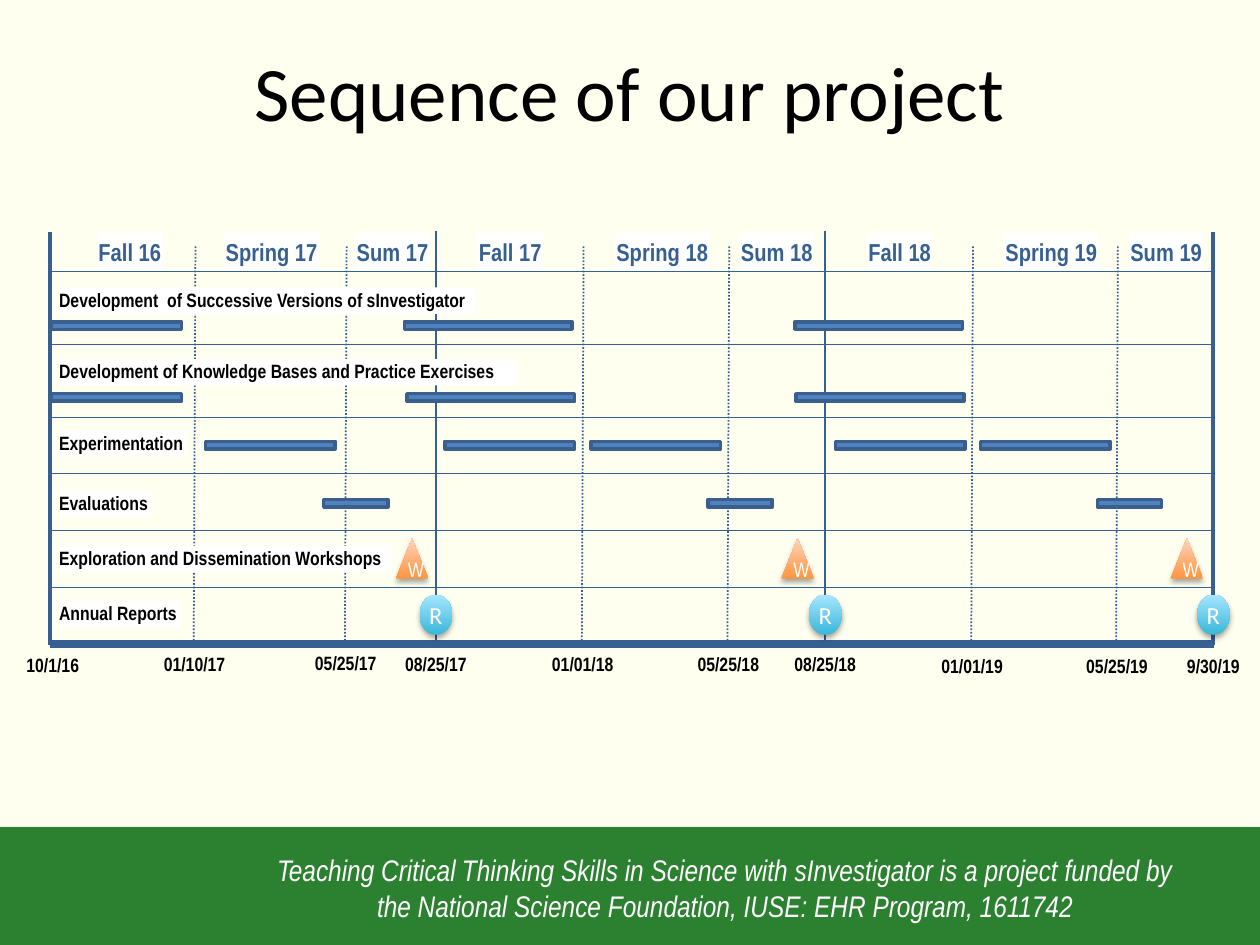
"""Build the project sequence slide: a three-year timeline with tasks, workshops and reports."""
from lxml.etree import SubElement
from pptx import Presentation
from pptx.dml.color import RGBColor
from pptx.enum.dml import MSO_LINE
from pptx.enum.shapes import MSO_CONNECTOR, MSO_SHAPE
from pptx.enum.text import MSO_ANCHOR as Anchor, MSO_AUTO_SIZE as AutoSize, PP_ALIGN as Align
from pptx.oxml.ns import qn
from pptx.util import Pt

COLORS = {
    "page": "FFFFF0", "band": "2C8131", "white": "FFFFFF", "black": "000000",
    "grid": "376092", "bar": "4F81BD", "bar_edge": "3A5F8C",
    "workshop": "FF953E", "workshop_light": "FFD2BD",
    "report": "39B7D8", "report_light": "A7E6FF",
}
NARROW, CALIBRI = "Arial Narrow", "Calibri"
START, END, AXIS = 28.8, 693.7, 368
HEADER_TOP = 133.2
ROW_RULES = [154.8, 196.6, 238.3, 270.7, 303.1, 335.5]
BAR_HEIGHT = 4.3
MARKER_SIZE = (18.7, 23)
SEASON_WIDTHS = {"Fall": 37.4, "Spring": 54, "Sum": 42.5}
TERMS = [
    ("Fall 16", 74.2), ("Spring 17", 155.2), ("Sum 17", 224.3),
    ("Fall 17", 291.6), ("Spring 18", 378.4), ("Sum 18", 443.9),
    ("Fall 18", 514.1), ("Spring 19", 600.8), ("Sum 19", 666.4),
]
TERM_STARTS = [
    ("01/10/17", 111.2, 379.1), ("05/25/17", 197.6, 378.7),
    ("01/01/18", 333, 379.1), ("05/25/18", 416.2, 379.1),
    ("01/01/19", 555.5, 380.5), ("05/25/19", 638.3, 380.5),
]
YEAR_ENDS = [("08/25/17", 249.1, 379.1), ("08/25/18", 471.6, 379.1), ("9/30/19", 693.4, 380.5)]
PROJECT_START = ("10/1/16", 30.2, 379.8)
TASKS = [
    ("Development  of Successive Versions of sInvestigator", 164.2, 237.6, 183.9,
     [(29.5, 74.2), (231.1, 95.8), (454.3, 95.8)]),
    ("Development of Knowledge Bases and Practice Exercises", 205.2, 261.4, 225,
     [(29.5, 74.2), (232.6, 95.8), (455, 95.8)]),
    ("Experimentation", 246.2, 72.7, 252.2,
     [(left, 74.2) for left in (117.4, 254.2, 337.7, 477.4, 560.2)]),
    ("Evaluations", 280.1, 52.6, 285.4, [(left, 36.7) for left in (185, 404.6, 627.1)]),
    ("Exploration and Dissemination Workshops", 311.8, 190.1, 0, []),
    ("Annual Reports", 343.4, 69.1, 0, []),
]
WORKSHOPS = [235.5, 455.8, 678.2]


def rgb(color):
    return RGBColor.from_string(COLORS[color])


def write(frame, wording, size, color, font=NARROW, align=Align.CENTER, bold=False, italic=False):
    paragraph = frame.paragraphs[0]
    paragraph.alignment = align
    run = paragraph.add_run()
    run.text = wording
    run.font.name, run.font.size = font, Pt(size)
    run.font.bold, run.font.italic = bold, italic
    run.font.color.rgb = rgb(color)
    return paragraph


def clear_insets(frame):
    frame.margin_left = frame.margin_right = frame.margin_top = frame.margin_bottom = 0


def add_line(slide, start, end, width, dotted=False):
    rule = slide.shapes.add_connector(MSO_CONNECTOR.STRAIGHT, *map(Pt, start + end))
    rule.line.color.rgb = rgb("grid")
    rule.line.width = Pt(width)
    if dotted:
        rule.line.dash_style = MSO_LINE.ROUND_DOT
    SubElement(rule._element.spPr, qn("a:effectLst"))


def add_box(slide, left, top, width, height, fill, edge=None, edge_width=0.75):
    box = slide.shapes.add_shape(MSO_SHAPE.RECTANGLE, *map(Pt, (left, top, width, height)))
    box.shadow.inherit = False
    box.fill.solid()
    box.fill.fore_color.rgb = rgb(fill)
    if edge:
        box.line.color.rgb = rgb(edge)
        box.line.width = Pt(edge_width)
    else:
        box.line.fill.background()
    return box


def add_shadow(shape):
    shape.shadow.inherit = False
    effects = shape._element.spPr.find(qn("a:effectLst"))
    shadow = SubElement(effects, qn("a:outerShdw"), blurRad=str(Pt(3.1)), dist=str(Pt(1.8)),
                        dir="5400000", rotWithShape="0")
    tint = SubElement(shadow, qn("a:srgbClr"), val=COLORS["black"])
    SubElement(tint, qn("a:alpha"), val="35000")


def add_label(slide, wording, left, top, width, height, size, color, fill="white", align=Align.CENTER):
    if fill:
        label = add_box(slide, left, top, width, height, fill)
    else:
        label = slide.shapes.add_textbox(*map(Pt, (left, top, width, height)))
    frame = label.text_frame
    clear_insets(frame)
    frame.word_wrap = False
    frame.auto_size = AutoSize.SHAPE_TO_FIT_TEXT
    frame.vertical_anchor = Anchor.MIDDLE
    return write(frame, wording, size, color, align=align, bold=True)


def add_marker(slide, outline, letter, center, top, color, size, font):
    width, height = MARKER_SIZE
    marker = slide.shapes.add_shape(outline, *map(Pt, (center - width / 2, top, width, height)))
    marker.fill.gradient()
    marker.fill.gradient_angle = 90
    for stop, tone in zip(marker.fill.gradient_stops, (color, color + "_light")):
        stop.color.rgb = rgb(tone)
    marker.line.fill.background()
    add_shadow(marker)
    write(marker.text_frame, letter, size, "white", font)
    return marker


def add_footer(slide):
    band = add_box(slide, 0, 473, 720, 67, "band", "band")
    add_shadow(band)
    credit = slide.shapes.add_textbox(Pt(142.6), Pt(483.1), Pt(543.6), Pt(48.2)).text_frame
    credit.word_wrap = True
    write(credit, "Teaching Critical Thinking Skills in Science with sInvestigator is a project "
          "funded by the National Science Foundation, IUSE: EHR Program, 1611742",
          17, "white", italic=True)


def add_title(slide):
    title = slide.shapes.title
    title.left, title.top, title.width, title.height = map(Pt, (36, 13.7, 648, 76.3))
    title.text_frame.vertical_anchor = Anchor.MIDDLE
    write(title.text_frame, "Sequence of our project", 44, "black", CALIBRI)


def add_grid(slide):
    for height in ROW_RULES:
        add_line(slide, (START, height), (END, height), 0.25, dotted=True)
    add_line(slide, (START, AXIS), (END, AXIS), 4.5)
    for _, center, _ in TERM_STARTS:
        add_line(slide, (center + 0.5, 140.8), (center - 0.5, AXIS), 1, dotted=True)
    for _, center, _ in YEAR_ENDS[:-1]:
        add_line(slide, (center, 132.2), (center, AXIS), 1)
    for edge in (START, YEAR_ENDS[-1][1]):
        add_line(slide, (edge, 132.5), (edge, 368.6), 2.25)


def add_headings(slide):
    for term, center in TERMS:
        width = SEASON_WIDTHS[term.split()[0]]
        add_label(slide, term, center - width / 2, HEADER_TOP, width, 21.6, 14, "grid")
    for date, center, middle in [PROJECT_START, *TERM_STARTS, *YEAR_ENDS]:
        add_label(slide, date, center - 18, middle - 8.3, 36, 16.6, 11, "black", fill=None)


def add_tasks(slide):
    for task, top, width, bar_top, bars in TASKS:
        name = add_label(slide, task, 33.8, top, width, 15.1, 11, "black", align=Align.LEFT)
        name.line_spacing = Pt(12)
        for left, length in bars:
            add_box(slide, left, bar_top, length, BAR_HEIGHT, "bar", "bar_edge", 2)


def add_milestones(slide):
    for center in WORKSHOPS:
        add_marker(slide, MSO_SHAPE.ISOSCELES_TRIANGLE, "W", center, 307.7, "workshop", 12, NARROW)
    for _, center, _ in YEAR_ENDS:
        report = add_marker(slide, MSO_SHAPE.OVAL, "R", center, 339.8, "report", 14, CALIBRI)
        clear_insets(report.text_frame)


def main():
    deck = Presentation()
    deck.slide_width, deck.slide_height = Pt(720), Pt(540)
    slide = deck.slides.add_slide(deck.slide_layouts[5])
    slide.background.fill.solid()
    slide.background.fill.fore_color.rgb = rgb("page")
    for add_part in (add_footer, add_title, add_grid, add_headings, add_tasks, add_milestones):
        add_part(slide)
    deck.save("out.pptx")


if __name__ == "__main__":
    main()
